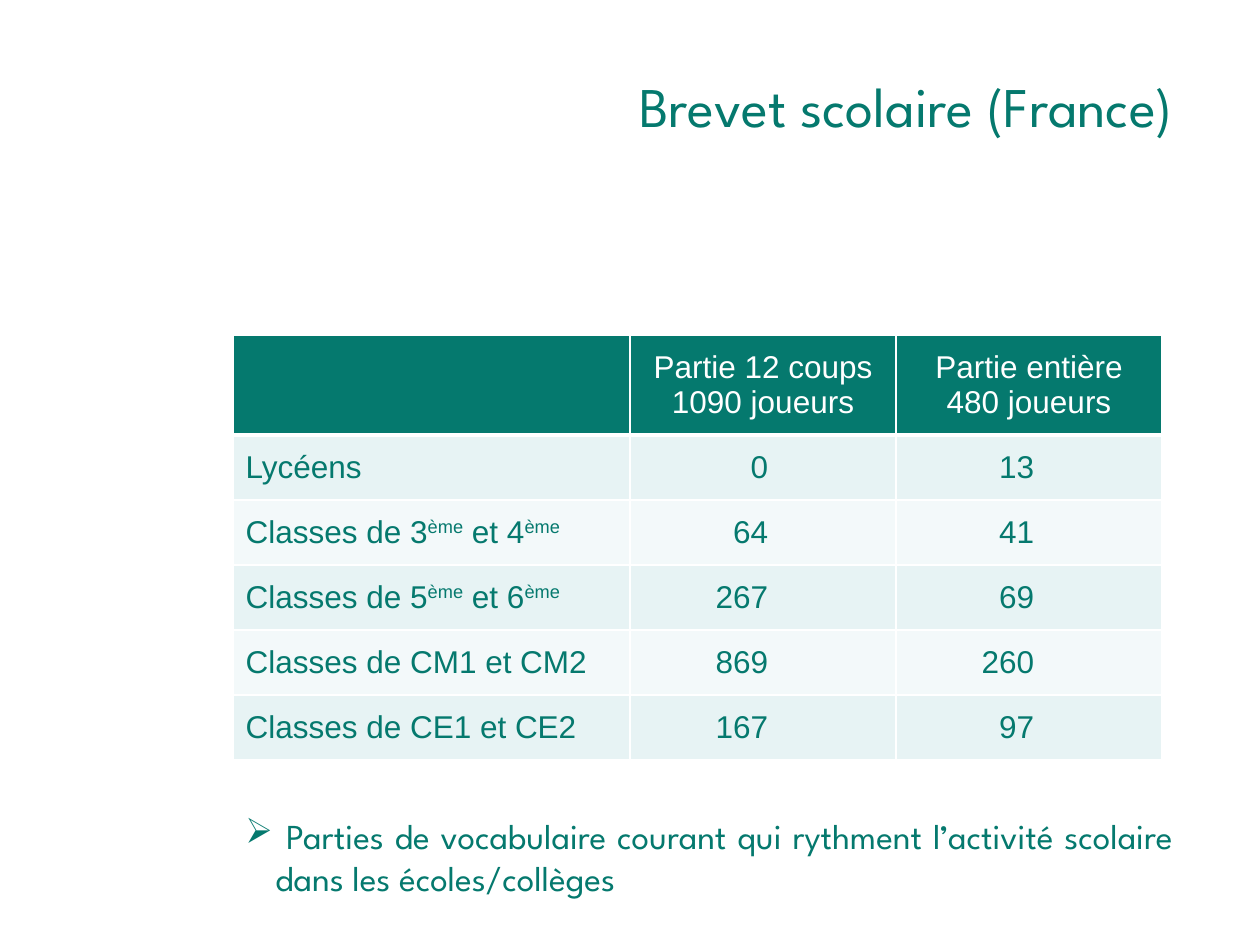
from pptx import Presentation, util as u
from pptx.dml.color import RGBColor
from pptx.enum import text
from pptx.oxml import parse_xml
from pptx.oxml.ns import nsdecls


class Theme:
    green = RGBColor(0x05, 0x79, 0x6E)
    white = RGBColor(0xFF, 0xFF, 0xFF)
    bands = (RGBColor(0xE7, 0xF3, 0xF4), RGBColor(0xF3, 0xF9, 0xFA))
    heading_font, table_font = "League Spartan", "Arial"
    title_size, note_size, table_size = u.Pt(32), u.Pt(20), u.Pt(18)


def px(n):
    return u.Emu(round(n * 914400 / 126))


def style(p, font, size, color, align):
    p.alignment = align
    for r in p.runs:
        r.font.name, r.font.size = font, size
        r.font.color.rgb = color


prs = Presentation()
prs.slide_width, prs.slide_height = px(1260), px(945)
s = prs.slides.add_slide(prs.slide_layouts[5])

# Title
title = s.shapes.title
title.left, title.top, title.width, title.height = px(0), px(66), px(1186), px(79)
tf = title.text_frame
tf.text = "Brevet scolaire (France)"
tf.vertical_anchor = text.MSO_ANCHOR.MIDDLE
style(tf.paragraphs[0], Theme.heading_font, Theme.title_size, Theme.green,
      text.PP_ALIGN.RIGHT)

# Table: ^ switches superscript on and off
rows = [
    ("", "Partie 12 coups\n1090 joueurs", "Partie entière\n480 joueurs"),
    ("Lycéens", "0", "13"),
    ("Classes de 3^ème^ et 4^ème^", "64", "41"),
    ("Classes de 5^ème^ et 6^ème^", "267", "69"),
    ("Classes de CM1 et CM2", "869", "260"),
    ("Classes de CE1 et CE2", "167", "97"),
]
col_widths = (397, 266, 266)
row_heights = [100] + [65] * 5
table = s.shapes.add_table(len(rows), len(col_widths), px(233), px(335),
                           px(sum(col_widths)), px(sum(row_heights))).table
for col, width in zip(table.columns, col_widths):
    col.width = px(width)
for row, height in zip(table.rows, row_heights):
    row.height = px(height)

for i, row in enumerate(rows):
    for j, value in enumerate(row):
        cell = table.cell(i, j)
        header = i == 0
        cell.vertical_anchor = text.MSO_ANCHOR.MIDDLE

        # White borders, heavier under the header; they precede the fill
        tcPr = cell._tc.get_or_add_tcPr()
        for side in "LRTB":
            width = u.Pt(3 if header and side == "B" else 1)
            tcPr.append(parse_xml(
                f'<a:ln{side} {nsdecls("a")} w="{width}"><a:solidFill>'
                f'<a:srgbClr val="{Theme.white}"/></a:solidFill></a:ln{side}>'))
        cell.fill.solid()
        cell.fill.fore_color.rgb = Theme.green if header else Theme.bands[(i - 1) % 2]

        if header:
            align = text.PP_ALIGN.CENTER
        elif j:
            align = text.PP_ALIGN.RIGHT
            cell.margin_right = px(128)
        else:
            align = text.PP_ALIGN.LEFT

        tf = cell.text_frame
        for k, line in enumerate(value.split("\n")):
            p = tf.add_paragraph() if k else tf.paragraphs[0]
            for n, part in enumerate(line.split("^")):
                if part:
                    r = p.add_run()
                    r.text = part
                    if n % 2:
                        r._r.get_or_add_rPr().set("baseline", "30000")
            style(p, Theme.table_font, Theme.table_size,
                  Theme.white if header else Theme.green, align)

# Bulleted remark
sp = s.shapes.add_textbox(px(233), px(808), px(953), px(97))
tf = sp.text_frame
tf.word_wrap = True
tf.auto_size = text.MSO_AUTO_SIZE.SHAPE_TO_FIT_TEXT
p = tf.paragraphs[0]
p.text = (" Parties de vocabulaire courant qui rythment l’activité scolaire "
          "dans les écoles/collèges")
pPr = p._p.get_or_add_pPr()
pPr.set("marL", str(px(30)))
pPr.set("indent", str(-px(30)))
pPr.append(parse_xml(f'<a:buChar {nsdecls("a")} char="➢"/>'))
style(p, Theme.heading_font, Theme.note_size, Theme.green, text.PP_ALIGN.JUSTIFY)

prs.save("out.pptx")
